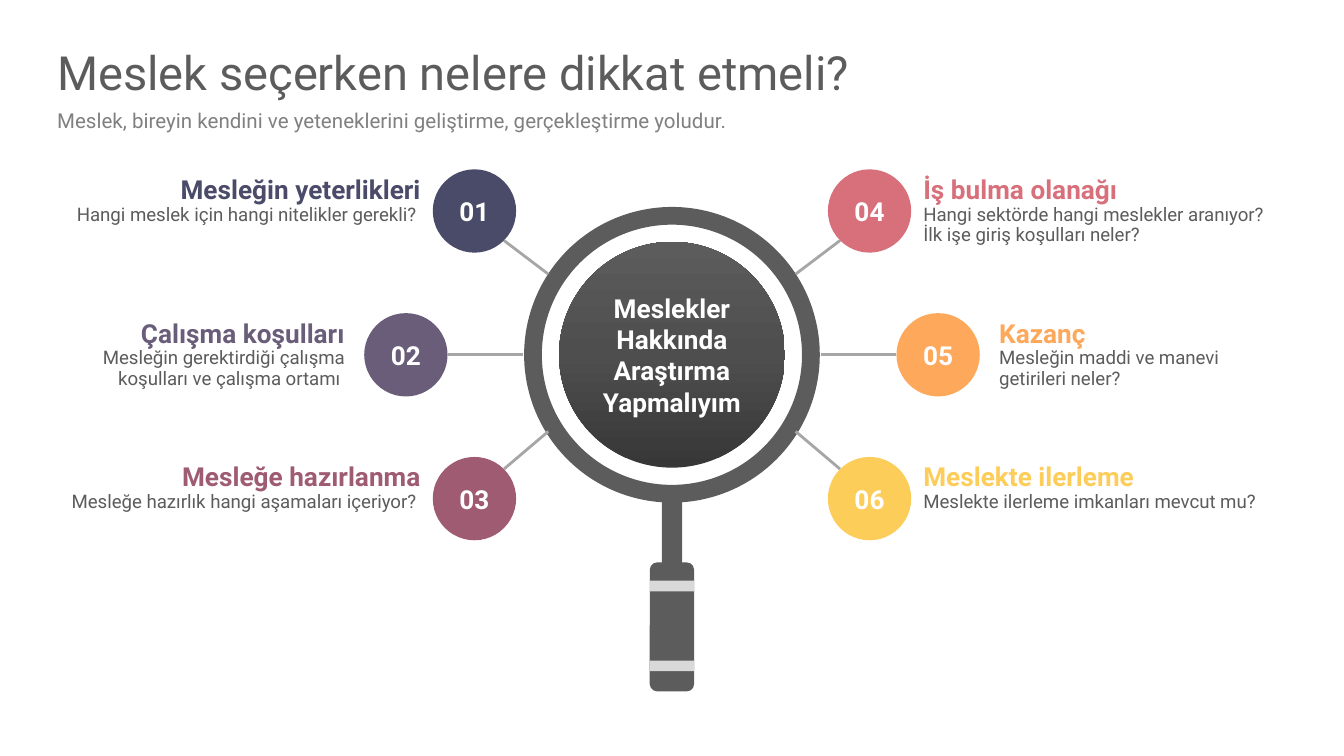
from copy import deepcopy
from dataclasses import dataclass

from lxml.etree import SubElement
from pptx import Presentation
from pptx.dml.color import RGBColor
from pptx.enum.shapes import MSO_CONNECTOR, MSO_SHAPE as Shape
from pptx.enum.text import MSO_ANCHOR as Anchor, MSO_AUTO_SIZE as AutoSize, PP_ALIGN as Align
from pptx.oxml.ns import qn
from pptx.util import Inches, Pt


@dataclass(frozen=True)
class Theme:
    font: str = "Roboto"
    dark: str = "5C5C5C"
    muted: str = "808080"
    line: str = "A6A6A6"
    band: str = "D9D9D9"
    white: str = "FFFFFF"
    lens: tuple = ("373737", "4E4E4E", "5C5C5C")
    title: float = 25.2
    subtitle: float = 11
    heading: float = 14
    body: float = 10


THEME = Theme()
WIDTH = Inches(10)
HEIGHT = WIDTH * 9 // 16
COLS = 100
UNIT = WIDTH / COLS
DISC = 6.2
FIRST_ROW, ROW_STEP = 12.6, 10.7
MARGIN = 4.4

LEFT, RIGHT = "left", "right"
TOPICS = [
    (LEFT, 0, "01", "494B69", "Mesleğin yeterlikleri",
     "Hangi meslek için hangi nitelikler gerekli? ", 1),
    (LEFT, 1, "02", "695D7A", "Çalışma koşulları",
     "Mesleğin gerektirdiği çalışma koşulları ve çalışma ortamı ", 2),
    (LEFT, 2, "03", "9F5B72", "Mesleğe hazırlanma",
     "Mesleğe hazırlık hangi aşamaları içeriyor? ", 1),
    (RIGHT, 0, "04", "D8707C", "İş bulma olanağı",
     "Hangi sektörde hangi meslekler aranıyor? İlk işe giriş koşulları neler?", 2),
    (RIGHT, 1, "05", "FDA85A", "Kazanç",
     "Mesleğin maddi ve manevi getirileri neler?", 2),
    (RIGHT, 2, "06", "FDCD5A", "Meslekte ilerleme",
     "Meslekte ilerleme imkanları mevcut mu?", 1),
]
DISC_LEFT = (32.2, 27.1, 32.2)
TEXT_WIDTH = (26.9, 21.25, 26.9)
SPOKES = (
    (37.5, 17.9, 40.8, 20.4),
    (33.3, 26.4, 38.9, 26.4),
    (37.5, 34.9, 40.8, 32.1),
)


def grid(*cells):
    return [round(c * UNIT) for c in cells]


def mirror(side, x, w=0):
    return x if side == LEFT else COLS - x - w


def add_run(p, text, *, size, color, bold=False):
    r = p.add_run()
    r.text = text
    r.font.name = THEME.font
    r.font.size = Pt(size)
    r.font.bold = bold
    r.font.color.rgb = RGBColor.from_string(color)
    return r


def write(sp, *runs, align=Align.LEFT, anchor=Anchor.MIDDLE, wrap=True,
          spacing=None, after=None):
    tf = sp.text_frame
    tf.margin_left = tf.margin_right = tf.margin_top = tf.margin_bottom = 0
    tf.auto_size = AutoSize.NONE
    tf.word_wrap = wrap
    tf.vertical_anchor = anchor
    p = tf.paragraphs[0]
    p.alignment = align
    p.line_spacing = spacing
    p.space_after = after
    for i, (text, style) in enumerate(runs):
        r = add_run(p, text, **style)
        if i < len(runs) - 1:
            p.add_line_break()
            p._p[-1].append(deepcopy(r._r.rPr))


def add_shape(s, kind, box, color):
    sp = s.shapes.add_shape(kind, *grid(*box))
    sp.shadow.inherit = False
    sp.fill.solid()
    sp.fill.fore_color.rgb = RGBColor.from_string(color)
    sp.line.fill.background()
    return sp


def add_spoke(s, x1, y1, x2, y2):
    c = s.shapes.add_connector(MSO_CONNECTOR.STRAIGHT, *grid(x1, y1, x2, y2))
    c.line.color.rgb = RGBColor.from_string(THEME.line)
    c.line.width = Pt(1.5)
    SubElement(c._element.spPr, qn("a:effectLst"))


def add_heading(s):
    title = s.shapes.title
    title.left, title.top, title.width, title.height = grid(4.25, 3.1, 91.5, 4.5)
    write(title, ("Meslek seçerken nelere dikkat etmeli?",
                  dict(size=THEME.title, color=THEME.dark)))
    subtitle = s.shapes.add_textbox(*grid(4.25, 8, 91.5, 1.9))
    write(subtitle, ("Meslek, bireyin kendini ve yeteneklerini geliştirme, gerçekleştirme yoludur.",
                     dict(size=THEME.subtitle, color=THEME.muted)), wrap=False)


def add_lens(s):
    sp = add_shape(s, Shape.OVAL, (41.6, 18, 16.8, 16.8), THEME.dark)
    sp.fill.gradient()
    sp.fill.gradient_angle = 90
    first = sp._element.spPr.find(".//" + qn("a:gs"))
    first.addnext(deepcopy(first))
    for i, (stop, color) in enumerate(zip(sp.fill.gradient_stops, THEME.lens)):
        stop.position = i / 2
        stop.color.rgb = RGBColor.from_string(color)
    write(sp, ("Meslekler Hakkında Araştırma Yapmalıyım",
               dict(size=THEME.heading, color=THEME.white, bold=True)),
          align=Align.CENTER)


def add_magnifier(s):
    add_shape(s, Shape.ROUNDED_RECTANGLE, (48.35, 41.85, 3.3, 9.6), THEME.dark)
    add_shape(s, Shape.ROUNDED_RECTANGLE, (49.25, 36.2, 1.5, 6.5), THEME.dark)
    for y in (43.2, 49.15):
        add_shape(s, Shape.RECTANGLE, (48.35, y, 3.3, 0.8), THEME.band)
    ring = add_shape(s, Shape.DONUT, (39, 15.4, 22, 22), THEME.dark)
    ring.adjustments[0] = 0.06


def add_topic(s, side, row, number, color, heading, body, lines):
    top = FIRST_ROW + row * ROW_STEP
    disc = add_shape(s, Shape.OVAL,
                     (mirror(side, DISC_LEFT[row], DISC), top, DISC, DISC), color)
    write(disc, (number, dict(size=THEME.heading, color=THEME.white, bold=True)),
          align=Align.CENTER)
    x1, y1, x2, y2 = SPOKES[row]
    add_spoke(s, mirror(side, x1), y1, mirror(side, x2), y2)
    w = TEXT_WIDTH[row]
    box = s.shapes.add_textbox(*grid(mirror(side, MARGIN, w), top + 0.55, w, 2.1 + 1.5 * lines))
    write(box,
          (heading, dict(size=THEME.heading, color=color, bold=True)),
          (body, dict(size=THEME.body, color=THEME.dark)),
          align=Align.RIGHT if side == LEFT else Align.LEFT,
          anchor=Anchor.TOP, spacing=0.9, after=Pt(10))


def main():
    prs = Presentation()
    prs.slide_width, prs.slide_height = WIDTH, HEIGHT
    s = prs.slides.add_slide(prs.slide_layouts[5])
    add_heading(s)
    add_lens(s)
    add_magnifier(s)
    for topic in TOPICS:
        add_topic(s, *topic)
    prs.save("out.pptx")


if __name__ == "__main__":
    main()
